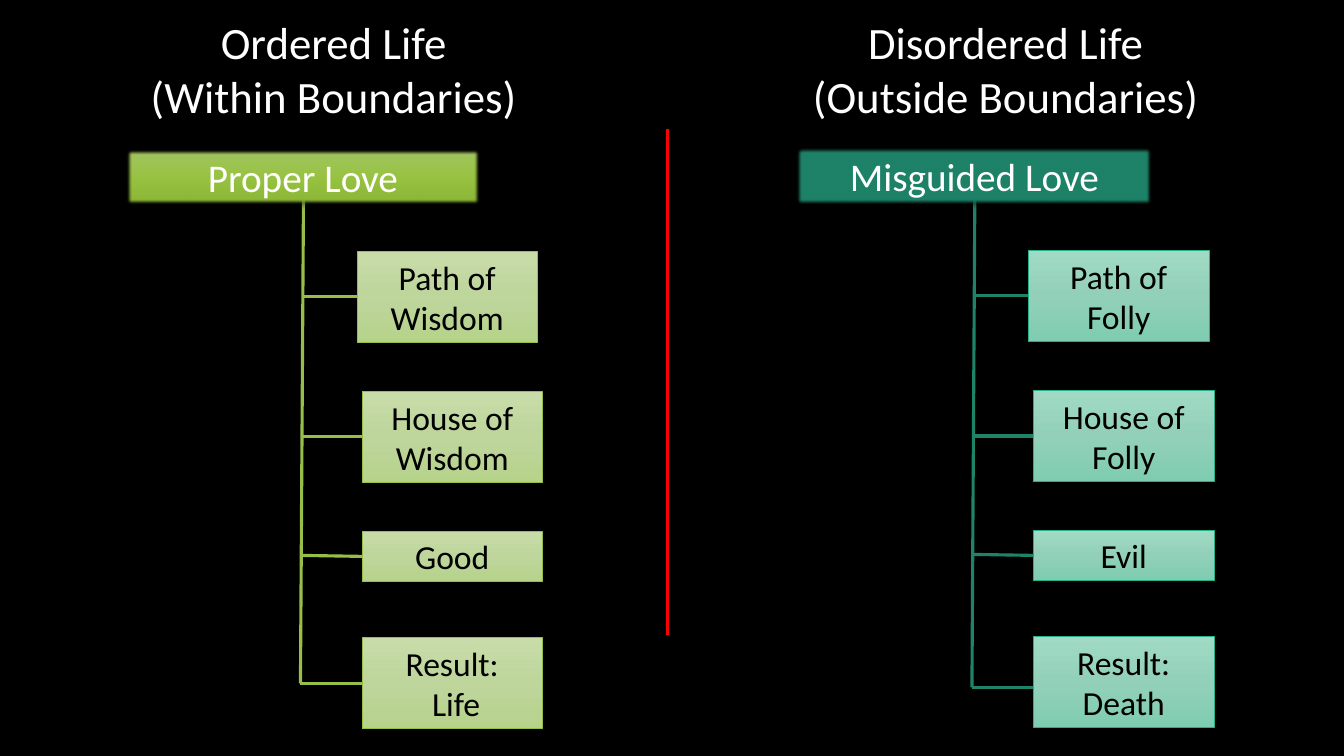
from dataclasses import dataclass

from pptx import Presentation
from pptx.dml.color import RGBColor
from pptx.enum.shapes import MSO_CONNECTOR, MSO_SHAPE
from pptx.enum.text import MSO_ANCHOR, MSO_AUTO_SIZE, PP_ALIGN
from pptx.oxml import parse_xml
from pptx.oxml.ns import nsdecls
from pptx.util import Inches, Pt

# Content
LIVES = [
    {"heading": ["Ordered Life", "(Within Boundaries)"],
     "love": "Proper Love",
     "steps": [["Path of Wisdom"], ["House of Wisdom"], ["Good"], ["Result:", " Life"]]},
    {"heading": ["Disordered Life", "(Outside Boundaries)"],
     "love": "Misguided Love",
     "steps": [["Path of Folly"], ["House of Folly"], ["Evil"], ["Result: Death"]]},
]


@dataclass(frozen=True)
class Palette:
    banner: tuple
    banner_line: str | None
    step: tuple
    step_line: str
    branch: str


@dataclass(frozen=True)
class Theme:
    font: str = "Calibri"
    background: str = "000000"
    light: str = "FFFFFF"
    dark: str = "000000"
    divider: str = "FF0000"
    heading_size: int = 32
    love_size: int = 28
    step_size: int = 24
    rule: float = 2.25
    lives: tuple = (
        Palette(("A2C664", "99C443", "8AB535"), None,
                ("C8DCA9", "BED59C", "B6D38A"), "97BE49", "97BE49"),
        Palette(("1F8369",), "1F8369",
                ("A0DAC4", "93D0B9", "7ECDB1"), "29AF8C", "1F8369"),
    )


THEME = Theme()

# Layout, in inches; the second tree repeats the first, shifted
WIDTH, HEIGHT = 13.33, 7.5
MIDDLE = 6.62
HEADING_TOP, HEADING_HEIGHT = 0.1, 1.18
SHIFTS = [(0, 0), (6.66, -0.01)]
BANNER = (1.24, 1.47, 3.53, 0.57)
TRUNK_SPANS = [(1.98, 6.78), (1.77, 6.82)]
TRUNK_TOP_X, TRUNK_FOOT_X = 3.01, 2.98
STEP_WIDTH = 1.79
STEP_PLACES = [(3.54, 2.49, 0.91), (3.59, 3.88, 0.91), (3.59, 5.27, 0.5), (3.59, 6.32, 0.91)]


def write(shape, lines, size, color):
    frame = shape.text_frame
    frame.text = "\n".join(lines)
    frame_format = {"word_wrap": True, "auto_size": MSO_AUTO_SIZE.SHAPE_TO_FIT_TEXT}
    for name, value in frame_format.items():
        setattr(frame, name, value)
    for paragraph in frame.paragraphs:
        paragraph.alignment = PP_ALIGN.CENTER
        paragraph.space_before = Pt(0)
        font_format = {"name": THEME.font, "size": Pt(size), "bold": False}
        for name, value in font_format.items():
            setattr(paragraph.runs[0].font, name, value)
        paragraph.runs[0].font.color.rgb = RGBColor.from_string(color)


def paint(shape, colors):
    """Fill with one solid colour, or with evenly spaced stops from top to bottom."""
    if len(colors) == 1:
        shape.fill.solid()
        shape.fill.fore_color.rgb = RGBColor.from_string(colors[0])
        return
    shape.fill.gradient()
    shape.fill.gradient_angle = 270
    stops = "".join(
        f'<a:gs pos="{100000 * i // (len(colors) - 1)}"><a:srgbClr val="{color}"/></a:gs>'
        for i, color in enumerate(colors))
    old_stops = shape.element.spPr.xpath("./a:gradFill/a:gsLst")[0]
    old_stops.getparent().replace(
        old_stops, parse_xml(f'<a:gsLst {nsdecls("a")}>{stops}</a:gsLst>'))


def add_box(shapes, place, colors, outline, line_width):
    box = shapes.add_shape(MSO_SHAPE.RECTANGLE, *map(Inches, place))
    box.shadow.inherit = False
    paint(box, colors)
    if outline:
        box.line.color.rgb = RGBColor.from_string(outline)
        box.line.width = Pt(line_width)
    else:
        box.line.fill.background()
    return box


def soften(shape):
    """Add a drop shadow and a slightly blurred edge."""
    effects = shape.element.spPr.xpath("./a:effectLst")[0]
    effects.append(parse_xml(
        f'<a:outerShdw {nsdecls("a")} blurRad="{Pt(4.5)}" dist="{Pt(1.5)}" dir="5400000" '
        'rotWithShape="0"><a:srgbClr val="000000"><a:alpha val="63000"/></a:srgbClr>'
        '</a:outerShdw>'))
    effects.append(parse_xml(f'<a:softEdge {nsdecls("a")} rad="{Pt(2.5)}"/>'))


def add_rule(shapes, start, end, color):
    rule = shapes.add_connector(MSO_CONNECTOR.STRAIGHT, *map(Inches, (*start, *end)))
    rule.line.color.rgb = RGBColor.from_string(color)
    rule.line.width = Pt(THEME.rule)
    rule.element.spPr.append(parse_xml(f'<a:effectLst {nsdecls("a")}/>'))


def add_heading(placeholder, lines, left, width):
    place = {"left": left, "top": HEADING_TOP, "width": width, "height": HEADING_HEIGHT}
    for name, value in place.items():
        setattr(placeholder, name, Inches(value))
    write(placeholder, lines, THEME.heading_size, THEME.light)
    placeholder.text_frame.vertical_anchor = MSO_ANCHOR.TOP


def add_tree(slide, life, palette, shift, trunk_span):
    shapes = slide.shapes.add_group_shape().shapes
    dx, dy = shift
    top, foot = trunk_span

    def trunk_x(y):
        return dx + TRUNK_TOP_X + (TRUNK_FOOT_X - TRUNK_TOP_X) * (y - top) / (foot - top)

    add_rule(shapes, (trunk_x(top), top), (trunk_x(foot), foot), palette.branch)
    left, banner_top, width, height = BANNER
    banner = add_box(shapes, (left + dx, banner_top + dy, width, height),
                     palette.banner, palette.banner_line, 0.75)
    soften(banner)
    write(banner, [life["love"]], THEME.love_size, THEME.light)

    for i, (lines, (left, step_top, height)) in enumerate(zip(life["steps"], STEP_PLACES)):
        left, step_top = left + dx, step_top + dy
        step = add_box(shapes, (left, step_top, STEP_WIDTH, height),
                       palette.step, palette.step_line, 0.5)
        write(step, lines, THEME.step_size, THEME.dark)
        is_last = i == len(STEP_PLACES) - 1
        y = foot if is_last else step_top + height / 2
        joint_y = y - 0.01 if len(lines[0].split()) == 1 and not is_last else y
        add_rule(shapes, (left, y), (trunk_x(joint_y), joint_y), palette.branch)


def main():
    deck = Presentation()
    deck.slide_width, deck.slide_height = Inches(WIDTH), Inches(HEIGHT)
    slide = deck.slides.add_slide(deck.slide_layouts.get_by_name("Comparison"))
    slide.background.fill.solid()
    slide.background.fill.fore_color.rgb = RGBColor.from_string(THEME.background)

    add_rule(slide.shapes, (MIDDLE, 1.28), (MIDDLE, 6.3), THEME.divider)
    headings = [slide.placeholders[1], slide.placeholders[3]]
    spans = [(0, MIDDLE), (MIDDLE, WIDTH - MIDDLE)]
    for heading, life, span in zip(headings, LIVES, spans):
        add_heading(heading, life["heading"], *span)
    for unused in [p for p in slide.placeholders if not p.text_frame.text]:
        unused.element.getparent().remove(unused.element)

    for life, palette, shift, trunk in zip(LIVES, THEME.lives, SHIFTS, TRUNK_SPANS):
        add_tree(slide, life, palette, shift, trunk)
    deck.save("out.pptx")


if __name__ == "__main__":
    main()
